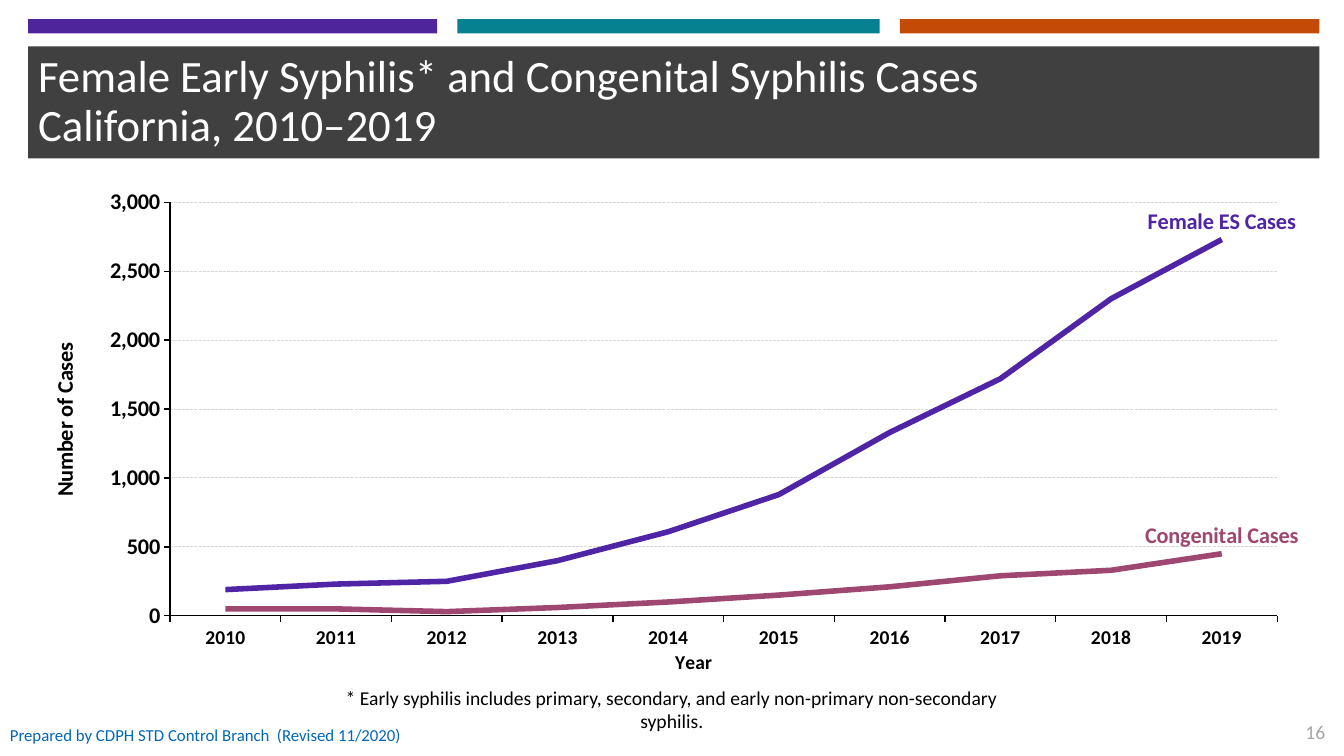
from lxml import etree
from pptx import Presentation
from pptx.chart.data import CategoryChartData
from pptx.dml.color import RGBColor
from pptx.enum.chart import XL_CHART_TYPE, XL_LABEL_POSITION, XL_MARKER_STYLE, XL_TICK_MARK
from pptx.enum.dml import MSO_LINE
from pptx.enum.shapes import MSO_SHAPE
from pptx.enum.text import MSO_ANCHOR, PP_ALIGN
from pptx.oxml.ns import qn
from pptx.util import Cm, Pt

FONT = "Calibri"
BLACK = RGBColor(0x00, 0x00, 0x00)
WHITE = RGBColor(0xFF, 0xFF, 0xFF)
CHARCOAL = RGBColor(0x40, 0x40, 0x40)
PURPLE = RGBColor(0x4F, 0x25, 0x9C)
TEAL = RGBColor(0x06, 0x81, 0x90)
ORANGE = RGBColor(0xC4, 0x4A, 0x07)
BLUE = RGBColor(0x01, 0x67, 0xBB)
PAGE_GRAY = RGBColor(0xA6, 0xA6, 0xA6)
GRID_GRAY = RGBColor(0xD9, 0xD9, 0xD9)
FEMALE_PURPLE = RGBColor(0x4F, 0x25, 0xA6)
CONGENITAL_PLUM = RGBColor(0x9E, 0x47, 0x70)

# Boxes are left, top, width, height in centimetres.
TITLE = "Female Early Syphilis* and Congenital Syphilis Cases\vCalifornia, 2010–2019"
TITLE_BOX = (0.71, 1.17, 32.54, 2.82)
STRIPE_TOP, STRIPE_HEIGHT = 0.48, 0.36
STRIPES = [(0.71, 10.31, PURPLE), (11.53, 10.64, TEAL), (22.68, 10.57, ORANGE)]
CAPTIONS = [
    ("16", (32.56, 18.01, 1.09, 0.86), 14, PAGE_GRAY, PP_ALIGN.RIGHT, MSO_ANCHOR.TOP),
    ("Prepared by CDPH STD Control Branch", (0, 18.01, 7.11, 1.02), 12, BLUE,
     PP_ALIGN.LEFT, MSO_ANCHOR.MIDDLE),
    ("(Revised 11/2020)", (6.73, 18.01, 3.81, 1.02), 12, BLUE,
     PP_ALIGN.LEFT, MSO_ANCHOR.MIDDLE),
    ("* Early syphilis includes primary, secondary, and early non-primary "
     "non-secondary syphilis.", (7.67, 17.15, 18.52, 0.86), 14, BLACK,
     PP_ALIGN.CENTER, MSO_ANCHOR.TOP),
]
CHART_BOX = (1.14, 4.29, 31.62, 12.85)
PLOT_LAYOUT = {"layoutTarget": "inner", "xMode": "edge", "yMode": "edge",
               "x": 0.1, "y": 0.063, "w": 0.887, "h": 0.811}
YEARS = [str(year) for year in range(2010, 2020)]
CASES = [
    ("Female ES Cases", FEMALE_PURPLE,
     (190, 230, 250, 400, 610, 880, 1330, 1720, 2300, 2730)),
    ("Congenital Cases", CONGENITAL_PLUM,
     (50, 50, 30, 60, 100, 150, 210, 290, 330, 450)),
]
CASE_SCALE = {"minimum_scale": 0, "maximum_scale": 3000, "major_unit": 500,
              "has_major_gridlines": True}
YEAR_SCALE = {"has_major_gridlines": False}


def cm_box(box):
    return [Cm(length) for length in box]


def set_all(target, values):
    for name, value in values.items():
        setattr(target, name, value)


def set_font(font, size, color, bold=False):
    set_all(font, {"name": FONT, "size": Pt(size), "bold": bold})
    font.color.rgb = color


def add_bar(slide, box, color):
    bar = slide.shapes.add_shape(MSO_SHAPE.RECTANGLE, *cm_box(box))
    bar.shadow.inherit = False
    bar.fill.solid()
    bar.fill.fore_color.rgb = color
    bar.line.fill.background()
    return bar


def write(shape, wording, size, color, align, anchor, spacing=1.0):
    frame = shape.text_frame
    set_all(frame, {"text": wording, "word_wrap": True, "vertical_anchor": anchor})
    paragraph = frame.paragraphs[0]
    set_all(paragraph, {"alignment": align, "line_spacing": spacing})
    for run in paragraph.runs:
        set_font(run.font, size, color)


def style_axis(axis, title, size, scale):
    set_all(axis, {**scale, "major_tick_mark": XL_TICK_MARK.OUTSIDE,
                   "minor_tick_mark": XL_TICK_MARK.NONE})
    set_font(axis.tick_labels.font, size, BLACK, True)
    axis.format.line.width = Pt(0.97)
    axis.format.line.color.rgb = BLACK
    axis.axis_title.text_frame.text = title
    set_font(axis.axis_title.text_frame.paragraphs[0].runs[0].font, size, BLACK, True)


def label_last_point(series, color):
    """Show the series name above its final point only."""
    series.data_labels.show_value = False
    label = series.points[len(YEARS) - 1].data_label
    set_font(label.font, 16, color, True)
    label.position = XL_LABEL_POSITION.ABOVE
    shown = series._element.find(f".//{qn('c:dLbl')}")
    shown.find(qn("c:showVal")).set("val", "0")
    shown.find(qn("c:showSerName")).set("val", "1")


def place_plot(chart):
    plot_area = chart._chartSpace.find(f".//{qn('c:plotArea')}")
    for layout in plot_area.findall(qn("c:layout")):
        plot_area.remove(layout)
    layout = etree.Element(qn("c:layout"))
    manual = etree.SubElement(layout, qn("c:manualLayout"))
    for name, value in PLOT_LAYOUT.items():
        etree.SubElement(manual, qn(f"c:{name}")).set("val", str(value))
    plot_area.insert(0, layout)


def add_case_chart(slide):
    cases = CategoryChartData(number_format="#,##0")
    cases.categories = YEARS
    for name, _, counts in CASES:
        cases.add_series(name, counts)
    chart = slide.shapes.add_chart(XL_CHART_TYPE.LINE, *cm_box(CHART_BOX), cases).chart
    set_all(chart, {"has_title": False, "has_legend": False})
    set_font(chart.font, 16, BLACK, True)
    chart.plots[0].vary_by_categories = False
    place_plot(chart)

    style_axis(chart.category_axis, "Year", 14, YEAR_SCALE)
    case_axis = chart.value_axis
    style_axis(case_axis, "Number of Cases", 16, CASE_SCALE)
    set_all(case_axis.tick_labels,
            {"number_format": "#,##0", "number_format_is_linked": False})
    title_body = case_axis._element.find(f"{qn('c:title')}//{qn('a:bodyPr')}")
    title_body.set("rot", "-5400000")
    title_body.set("vert", "horz")
    grid = case_axis.major_gridlines.format.line
    grid.color.rgb = GRID_GRAY
    set_all(grid, {"width": Pt(0.75), "dash_style": MSO_LINE.SQUARE_DOT})

    for series, (_, color, _) in zip(chart.plots[0].series, CASES):
        series.smooth = False
        series.marker.style = XL_MARKER_STYLE.NONE
        series.format.line.width = Pt(4)
        series.format.line.color.rgb = color
        label_last_point(series, color)


def main():
    deck = Presentation()
    set_all(deck, {"slide_width": Cm(33.87), "slide_height": Cm(19.05)})
    slide = deck.slides.add_slide(deck.slide_layouts[6])
    banner = add_bar(slide, TITLE_BOX, CHARCOAL)
    write(banner, TITLE, 32, WHITE, PP_ALIGN.LEFT, MSO_ANCHOR.MIDDLE, 0.9)
    for left, width, color in STRIPES:
        add_bar(slide, (left, STRIPE_TOP, width, STRIPE_HEIGHT), color)
    add_case_chart(slide)
    for wording, box, *style in CAPTIONS:
        write(slide.shapes.add_textbox(*cm_box(box)), wording, *style)
    deck.save("out.pptx")


if __name__ == "__main__":
    main()
